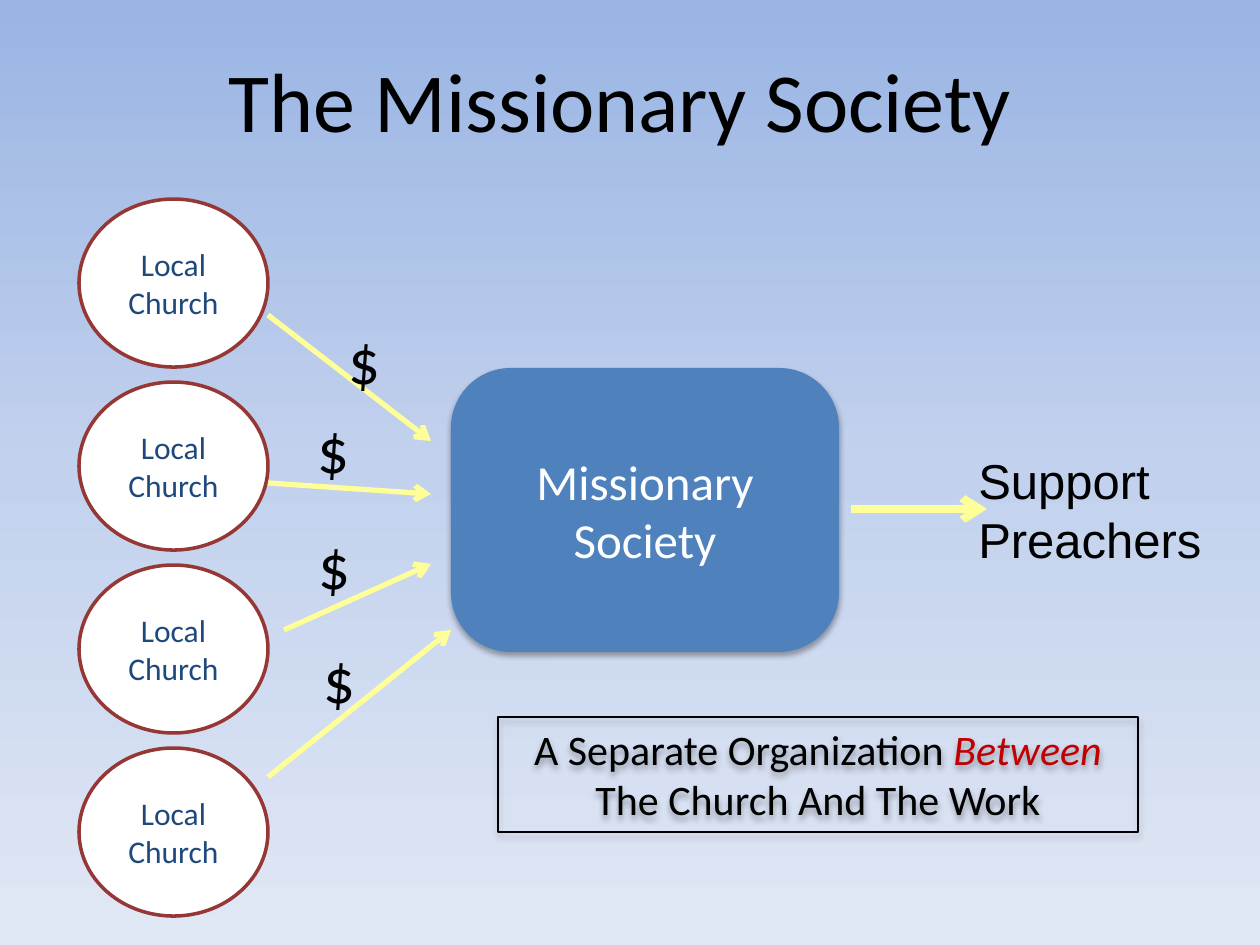
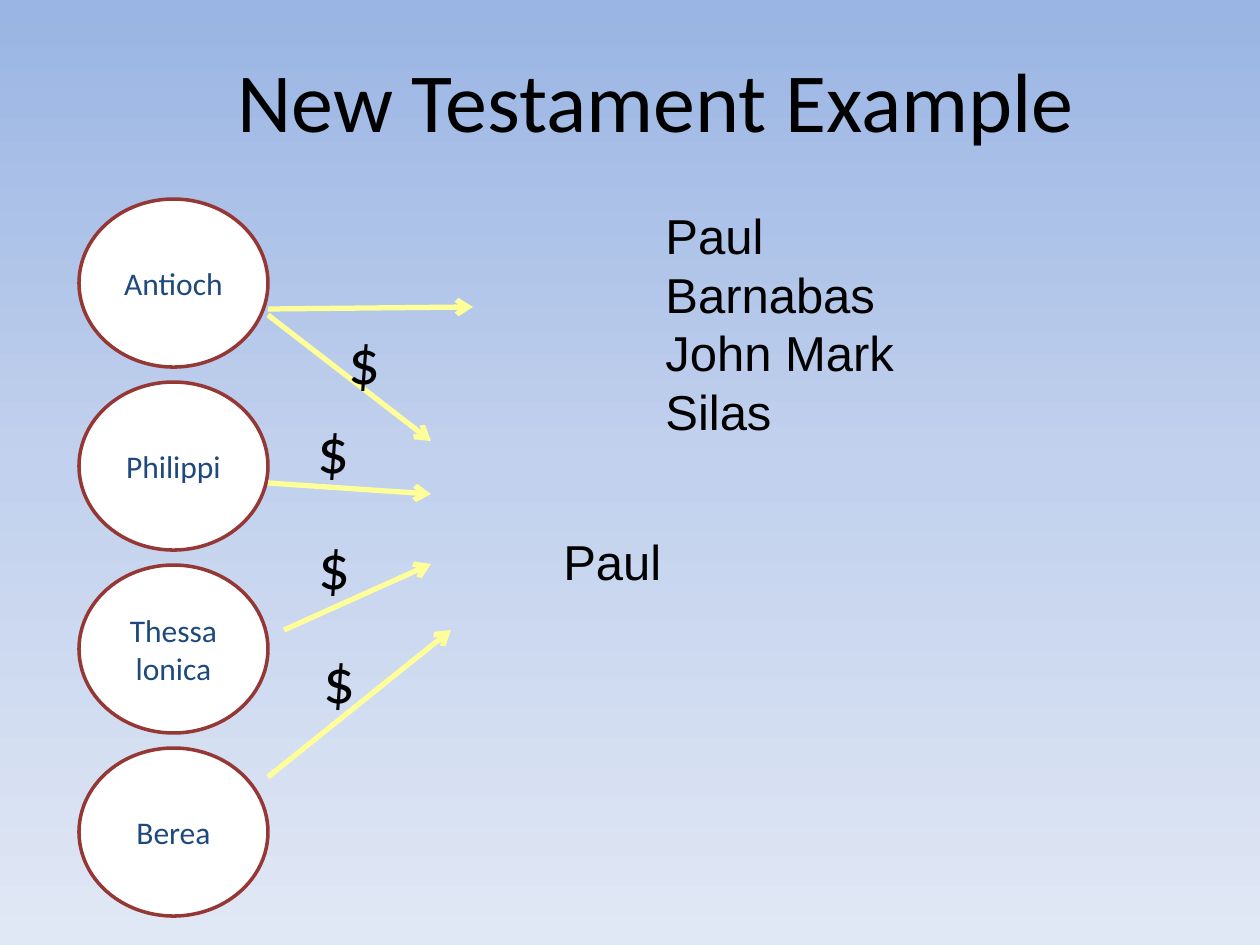
from copy import deepcopy

from lxml.etree import SubElement
from pptx import Presentation
from pptx.dml.color import RGBColor
from pptx.enum.shapes import MSO_CONNECTOR, MSO_SHAPE
from pptx.enum.text import MSO_ANCHOR, PP_ALIGN
from pptx.oxml.ns import qn
from pptx.util import Inches, Pt

BLACK = RGBColor(0x00, 0x00, 0x00)
WHITE = RGBColor(0xFF, 0xFF, 0xFF)
BLUE = RGBColor(0x4F, 0x81, 0xBD)
NAVY = RGBColor(0x1F, 0x49, 0x7D)
MAROON = RGBColor(0x95, 0x37, 0x35)
RED = RGBColor(0xC0, 0x00, 0x00)
YELLOW = RGBColor(0xFF, 0xFF, 0x99)
SKY = [
    (0, RGBColor(0x9A, 0xB5, 0xE4)),
    (0.5, RGBColor(0xC2, 0xD1, 0xED)),
    (1, RGBColor(0xE1, 0xE8, 0xF5)),
]

TITLE = {"name": "Calibri", "size": Pt(48)}
CHURCH = {"name": "Calibri", "size": Pt(18)}
DOLLAR = {"name": "Calibri", "size": Pt(36)}
SOCIETY = {"name": "Calibri", "size": Pt(28)}
NOTE = {"name": "Calibri", "size": Pt(24)}
PREACHER = {"name": "Arial", "size": Pt(28)}

# Lengths in px: boxes are left, top, width, height; arrows are x1, y1, x2, y2
CHURCH_LEFT, CHURCH_TOP, CHURCH_STEP = 79, 199, 183
CHURCH_SIZE = (189, 168)
GIFT_ARROWS = [
    (268, 315, 431, 441),
    (268, 483, 431, 494),
    (284, 630, 431, 564),
    (268, 777, 451, 630),
]
DOLLAR_CORNERS = [(336, 315), (305, 404), (306, 520), (311, 634)]
DOLLAR_SIZE = (32, 89)

SLIDES = [
    {
        "title": ("The Missionary Society ", (94, 42, 1071, 94)),
        "churches": [["Local", "Church"]] * 4,
        "society": (["Missionary", "Society"], (451, 368, 388, 284)),
        "arrows": [((851, 509, 987, 509), 4.5)],
        "preachers": [(["Support", "Preachers"], (966, 444, 252, 132))],
        "note": (
            [[("A Separate Organization ", BLACK, False), ("Between", RED, True)],
             "The Church And The Work"],
            (498, 717, 640, 115),
        ),
    },
    {
        "title": ("New Testament Example", (94, 42, 1124, 94)),
        "churches": [["Antioch"], ["Philippi"], ["Thessa lonica"], ["Berea"]],
        "arrows": [((268, 309, 473, 307), 3)],
        "preachers": [
            (["Paul", "Barnabas", "John Mark", "Silas"], (653, 199, 423, 251)),
            (["Paul"], (551, 525, 423, 72)),
        ],
    },
]


def px(*lengths):
    return [round(length * Inches(1) / 126) for length in lengths]


def write(shape, lines, font, color=BLACK, align=PP_ALIGN.LEFT, anchor=MSO_ANCHOR.TOP):
    """Fill a shape with lines; a line is a string or a list of (text, color, italic)."""
    frame = shape.text_frame
    frame.word_wrap = True
    frame.vertical_anchor = anchor
    for number, line in enumerate(lines):
        para = frame.add_paragraph() if number else frame.paragraphs[0]
        para.alignment = align
        spans = [(line, color, False)] if isinstance(line, str) else line
        for text, span_color, italic in spans:
            span = para.add_run()
            span.text = text
            for key, value in {**font, "italic": italic}.items():
                setattr(span.font, key, value)
            span.font.color.rgb = span_color


def add_text(page, lines, box, font, **options):
    shape = page.shapes.add_textbox(*px(*box))
    write(shape, lines, font, **options)
    return shape


def add_title(page, text, box):
    shape = add_text(page, [text], box, TITLE, align=PP_ALIGN.CENTER)
    properties = shape.text_frame.paragraphs[0]._p.get_or_add_pPr()
    before = SubElement(properties, qn("a:spcBef"))
    SubElement(before, qn("a:spcPct"), val="20000")


def add_box(page, kind, box, fill=None, line=None, width=0, shadow=False):
    shape = page.shapes.add_shape(kind, *px(*box))
    shape.shadow.inherit = False
    if fill is None:
        shape.fill.background()
    else:
        shape.fill.solid()
        shape.fill.fore_color.rgb = fill
    if line is None:
        shape.line.fill.background()
    else:
        shape.line.color.rgb = line
        shape.line.width = Pt(width)
    if shadow:
        effects = shape._element.spPr.find(qn("a:effectLst"))
        outer = SubElement(effects, qn("a:outerShdw"), blurRad=str(Pt(3.5)),
                           dist=str(Pt(2.2)), dir="5400000", rotWithShape="0")
        shade = SubElement(outer, qn("a:srgbClr"), val=str(BLACK))
        SubElement(shade, qn("a:alpha"), val="32000")
    return shape


def add_arrow(page, ends, width):
    arrow = page.shapes.add_connector(MSO_CONNECTOR.STRAIGHT, *px(*ends))
    arrow.line.color.rgb = YELLOW
    arrow.line.width = Pt(width)
    SubElement(arrow.line._get_or_add_ln(), qn("a:tailEnd"), type="arrow")
    SubElement(arrow._element.spPr, qn("a:effectLst"))


def add_churches(page, names):
    """Draw the column of churches, each with its arrow and dollar sign."""
    for row, lines in enumerate(names):
        box = (CHURCH_LEFT, CHURCH_TOP + row * CHURCH_STEP, *CHURCH_SIZE)
        church = add_box(page, MSO_SHAPE.OVAL, box, WHITE, MAROON, 2)
        write(church, lines, CHURCH, NAVY, PP_ALIGN.CENTER, MSO_ANCHOR.MIDDLE)
    for ends in GIFT_ARROWS:
        add_arrow(page, ends, 3)
    for corner in DOLLAR_CORNERS:
        add_text(page, ["$"], (*corner, *DOLLAR_SIZE), DOLLAR)


def add_society(page, lines, box):
    society = add_box(page, MSO_SHAPE.ROUNDED_RECTANGLE, box, BLUE, shadow=True)
    society.adjustments[0] = 0.21
    write(society, lines, SOCIETY, WHITE, PP_ALIGN.CENTER, MSO_ANCHOR.MIDDLE)


def add_note(page, lines, box):
    note = add_box(page, MSO_SHAPE.RECTANGLE, box, line=BLACK, width=0.75, shadow=True)
    write(note, lines, NOTE, align=PP_ALIGN.CENTER)


def paint_background(master):
    fill = master.background.fill
    fill.gradient()
    fill.gradient_angle = 270
    stops = next(master._element.iter(qn("a:gsLst")))
    stops.append(deepcopy(stops[0]))
    for stop, (position, color) in zip(fill.gradient_stops, SKY):
        stop.position = position
        stop.color.rgb = color


def main():
    deck = Presentation()
    deck.slide_width, deck.slide_height = Inches(10), Inches(7.5)
    paint_background(deck.slide_master)
    for content in SLIDES:
        page = deck.slides.add_slide(deck.slide_layouts[6])
        if "society" in content:
            add_society(page, *content["society"])
        add_churches(page, content["churches"])
        for ends, width in content["arrows"]:
            add_arrow(page, ends, width)
        for lines, box in content["preachers"]:
            add_text(page, lines, box, PREACHER)
        if "note" in content:
            add_note(page, *content["note"])
        add_title(page, *content["title"])
    deck.save("out.pptx")


if __name__ == "__main__":
    main()
